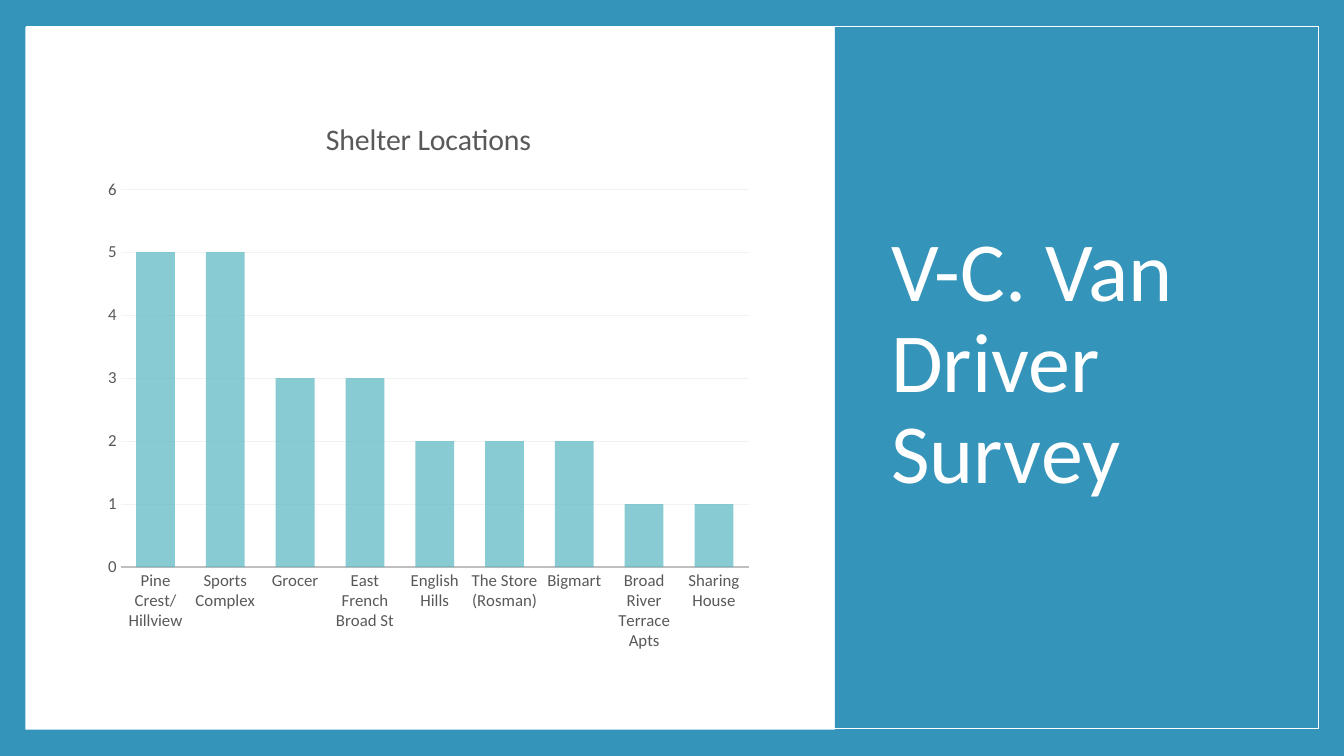
from lxml.etree import SubElement
from pptx import Presentation
from pptx.chart.data import CategoryChartData as ChartData
from pptx.dml.color import RGBColor
from pptx.enum.chart import XL_CHART_TYPE as ChartType, XL_TICK_MARK as TickMark
from pptx.enum.shapes import MSO_SHAPE as Shape
from pptx.enum.text import MSO_ANCHOR as Anchor
from pptx.oxml.ns import qn
from pptx.util import Inches, Pt

BLUE, WHITE, TEAL = "3494BA", "FFFFFF", "58B6C0"
GREY, AXIS_GREY, GRID_GREY = "595959", "BFBFBF", "F2F2F2"

SHELTERS = {
    "Pine Crest/Hillview": 5,
    "Sports Complex": 5,
    "Grocer": 3,
    "East French Broad St": 3,
    "English Hills": 2,
    "The Store (Rosman)": 2,
    "Bigmart": 2,
    "Broad River Terrace Apts": 1,
    "Sharing House": 1,
}


def color(hex_text):
    return RGBColor.from_string(hex_text)


def paint(fill, hex_text):
    fill.solid()
    fill.fore_color.rgb = color(hex_text)


def style_line(line, hex_text, width):
    paint(line.fill, hex_text)
    line.width = Pt(width)


def style_font(font, size, hex_text, name="Calibri"):
    font.name, font.size, font.bold = name, Pt(size), False
    font.color.rgb = color(hex_text)


def write(frame, text, size=12, fill=GREY, spacing=None):
    para = frame.paragraphs[0]
    para.line_spacing = spacing
    span = para.add_run()
    span.text = text
    style_font(span.font, size, fill)


class SlideBuilder:
    """Places elements by percentages of the slide's width and height."""

    def __init__(self, deck, background):
        self.deck = deck
        self.page = deck.slides.add_slide(deck.slide_layouts[6])
        paint(self.page.background.fill, background)

    def area(self, left, top, width, height):
        across, down = self.deck.slide_width, self.deck.slide_height
        return [round(share * full / 100) for share, full in
                ((left, across), (top, down), (width, across), (height, down))]

    def panel(self, *place, fill=None, line=None):
        box = self.page.shapes.add_shape(Shape.RECTANGLE, *self.area(*place))
        box.shadow.inherit = False
        if fill:
            paint(box.fill, fill)
        else:
            box.fill.background()
        if line:
            style_line(box.line, line, 1)
        else:
            box.line.fill.background()

    def heading(self, *place, text, **style):
        frame = self.page.shapes.add_textbox(*self.area(*place)).text_frame
        frame.word_wrap = True
        frame.vertical_anchor = Anchor.MIDDLE
        write(frame, text, **style)

    def columns(self, *place, title, values, fill, opacity):
        data = ChartData()
        data.categories = list(values)
        data.add_series(title, list(values.values()))
        chart = self.page.shapes.add_chart(
            ChartType.COLUMN_CLUSTERED, *self.area(*place), data).chart
        style_font(chart.font, 10, "000000")
        chart.has_legend = False
        chart.has_title = True
        write(chart.chart_title.text_frame, title, size=21.3)
        chart.chart_title.include_in_layout = False

        # Bars
        plot = chart.plots[0]
        plot.vary_by_categories = False
        plot.gap_width, plot.overlap = 80, 25
        bars = plot.series[0].format
        paint(bars.fill, fill)
        tint = bars.fill._xPr.find(qn("a:solidFill"))[0]
        SubElement(tint, qn("a:alpha"), val=str(opacity * 1000))

        # Axes
        for axis in (chart.category_axis, chart.value_axis):
            axis.major_tick_mark = axis.minor_tick_mark = TickMark.NONE
            style_font(axis.tick_labels.font, 12, GREY)
        style_line(chart.category_axis.format.line, AXIS_GREY, 1.25)
        scale = chart.value_axis
        scale.format.line.fill.background()
        scale.minimum_scale, scale.maximum_scale, scale.major_unit = 0, 6, 1
        scale.has_major_gridlines = True
        style_line(scale.major_gridlines.format.line, GRID_GREY, 0.75)


def main():
    deck = Presentation()
    deck.slide_width, deck.slide_height = Inches(13.33), Inches(7.5)
    slide = SlideBuilder(deck, BLUE)

    # White page and blue title panel
    slide.panel(1.88, 3.6, 96.17, 92.93, fill=WHITE)
    slide.panel(62.12, 3.47, 36, 93.07, fill=BLUE)
    slide.heading(65.57, 8.93, 29.33, 78.8, text="V-C. Van Driver Survey",
                  size=60, fill=WHITE, spacing=0.9)

    # Thin frame
    slide.panel(1.95, 3.47, 96.17, 92.93, line=WHITE)

    # Survey results
    slide.columns(7.05, 12.8, 49.66, 74.8, title="Shelter Locations",
                  values=SHELTERS, fill=TEAL, opacity=70)

    deck.save("out.pptx")


if __name__ == "__main__":
    main()
